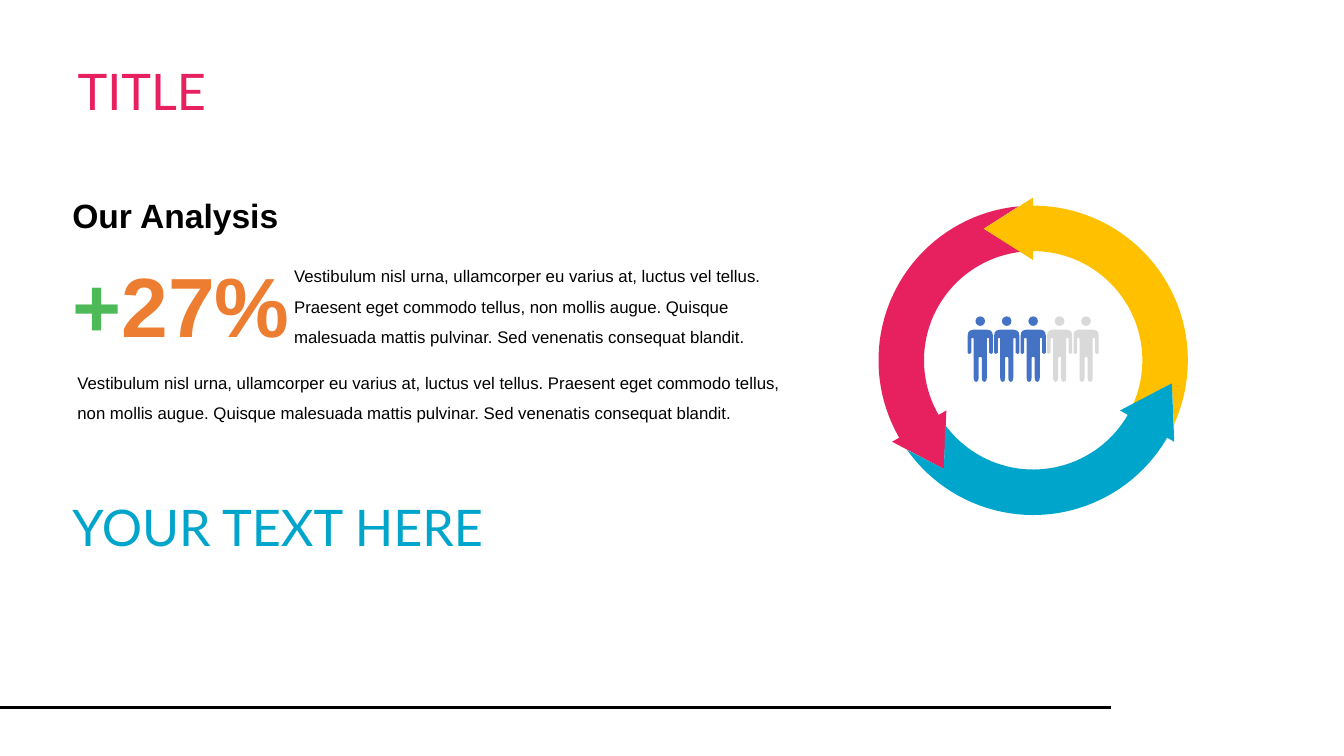
import math
from pptx import Presentation
from pptx import util as u
from pptx.dml import color
from pptx.enum import shapes, text
from pptx.oxml import ns
from lxml import etree

PINK, YELLOW, BLUE = "E7205F", "FFC000", "00A5CC"
BLACK, GREEN, ORANGE = "000000", "4DB957", "ED7D31"
COUNTED, REMAINING = "4472C4", "D9D9D9"

CENTRE_X, CENTRE_Y = 738, 257.4
RING_OUTER, RING_INNER = 110.5, 78
HALF_BODY = [
    (4.7, 0), (7.5, 0.8), (8.6, 2.2), (9, 4.5), (9, 16.4), (8.5, 17.2),
    (7.6, 17.4), (6.4, 16.5), (6.4, 6.4), (5.7, 5.8), (4.7, 6.4),
    (4.7, 34.5), (4.2, 36.7), (3, 37.4), (1.6, 36.7), (1.1, 34.5),
    (1.1, 20.2), (0.6, 19.5),
]
LOREM = ("Vestibulum nisl urna, ullamcorper eu varius at, luctus vel tellus. "
         "Praesent eget commodo tellus, non mollis augue. Quisque malesuada "
         "mattis pulvinar. Sed venenatis consequat blandit.")


def rgb(hex_code):
    return color.RGBColor.from_string(hex_code)


def ring_point(radius, degrees):
    angle = math.radians(degrees)
    return CENTRE_X + radius * math.cos(angle), CENTRE_Y + radius * math.sin(angle)


def arc(radius, start, end, steps=40):
    return [ring_point(radius, start + (end - start) * i / steps)
            for i in range(steps + 1)]


def ring_arrow(turn):
    head, tip, tail = turn - 90, turn - 110.6, turn + 24.6
    return ([ring_point(100.4, tip), ring_point(116.3, head)]
            + arc(RING_OUTER, head, tail)
            + [ring_point(100.4, tip + 120)]
            + arc(RING_INNER, tail - 0.9, head)
            + [ring_point(71.6, head)])


class SlideBuilder:
    body_font, display_font = "Arial", "Lato"

    def __init__(self, slide):
        self.slide = slide

    def fill(self, shape, hex_code):
        shape.shadow.inherit = False
        shape.fill.solid()
        shape.fill.fore_color.rgb = rgb(hex_code)
        shape.line.fill.background()

    def set_text(self, box, runs, size, font, bold=False, spacing=None, before=None):
        paragraph = box.text_frame.paragraphs[0]
        paragraph.alignment = text.PP_ALIGN.LEFT
        paragraph.line_spacing = spacing
        if before is not None:
            paragraph.space_before = u.Pt(before)
        for words, hex_code in runs:
            run = paragraph.add_run()
            run.text = words
            run.font.size = u.Pt(size)
            run.font.name = font
            run.font.bold = bold
            run.font.color.rgb = rgb(hex_code)

    def text_box(self, left, top, width, height, wrap=True, grow=True):
        box = self.slide.shapes.add_textbox(*map(u.Pt, (left, top, width, height)))
        box.text_frame.word_wrap = wrap
        sizing = text.MSO_AUTO_SIZE
        box.text_frame.auto_size = sizing.SHAPE_TO_FIT_TEXT if grow else sizing.NONE
        return box

    def body_text(self, left, top, width, height):
        self.set_text(self.text_box(left, top, width, height), [(LOREM, BLACK)],
                      12, self.body_font, spacing=1.5)

    def bold_text(self, left, top, width, height, runs, size):
        self.set_text(self.text_box(left, top, width, height, wrap=False), runs,
                      size, self.body_font, bold=True)

    def display_text(self, box, words, hex_code):
        self.set_text(box, [(words, hex_code)], 36, self.display_font,
                      spacing=0.9, before=10)

    def title(self, left, top, width, height, words, hex_code):
        title = self.slide.shapes.title
        title.left, title.top, title.width, title.height = map(
            u.Pt, (left, top, width, height))
        title.text_frame.auto_size = text.MSO_AUTO_SIZE.NONE
        title.text_frame.vertical_anchor = text.MSO_ANCHOR.TOP
        self.display_text(title, words, hex_code)

    def outline(self, points, hex_code):
        scaled = [(x * 100, y * 100) for x, y in points]
        builder = self.slide.shapes.build_freeform(*scaled[0], scale=u.Pt(1) / 100)
        builder.add_line_segments(scaled[1:], close=True)
        self.fill(builder.convert_to_shape(), hex_code)

    def person(self, centre, hex_code):
        right = [(centre + dx, 235.4 + dy) for dx, dy in HALF_BODY]
        left = [(2 * centre - x, y) for x, y in reversed(right)]
        self.outline(right + left, hex_code)
        head = self.slide.shapes.add_shape(
            shapes.MSO_SHAPE.OVAL, *map(u.Pt, (centre - 3.4, 226, 6.8, 6.8)))
        self.fill(head, hex_code)

    def rule(self, x1, y1, x2, y2, hex_code, weight):
        line = self.slide.shapes.add_connector(
            shapes.MSO_CONNECTOR.STRAIGHT, *map(u.Pt, (x1, y1, x2, y2)))
        line.line.color.rgb = rgb(hex_code)
        line.line.width = u.Pt(weight)
        etree.SubElement(line._element.spPr, ns.qn("a:effectLst"))


def main():
    deck = Presentation()
    deck.slide_width, deck.slide_height = u.Pt(960), u.Pt(540)
    page = SlideBuilder(deck.slides.add_slide(deck.slide_layouts[5]))

    page.title(48.2, 44.6, 325.4, 52.6, "TITLE", PINK)
    page.body_text(48.2, 255.6, 531.4, 48.2)
    page.bold_text(44.6, 136, 163.4, 36, [("Our Analysis", BLACK)], 24)
    page.body_text(203, 179.3, 373.7, 69.8)
    page.bold_text(44.6, 177.8, 171.4, 79.9, [("+", GREEN), ("27%", ORANGE)], 60)

    for turn, hex_code in ((-120, PINK), (0, YELLOW), (120, BLUE)):
        page.outline(ring_arrow(turn), hex_code)
    for place, hex_code in enumerate([COUNTED] * 3 + [REMAINING] * 2):
        page.person(CENTRE_X + (place - 2) * 18.9, hex_code)

    page.display_text(page.text_box(44.6, 355.7, 325.4, 52.6, grow=False),
                      "YOUR TEXT HERE", BLUE)
    page.rule(0, 505.4, 793.4, 505.4, BLACK, 2.25)
    deck.save("out.pptx")


if __name__ == "__main__":
    main()
